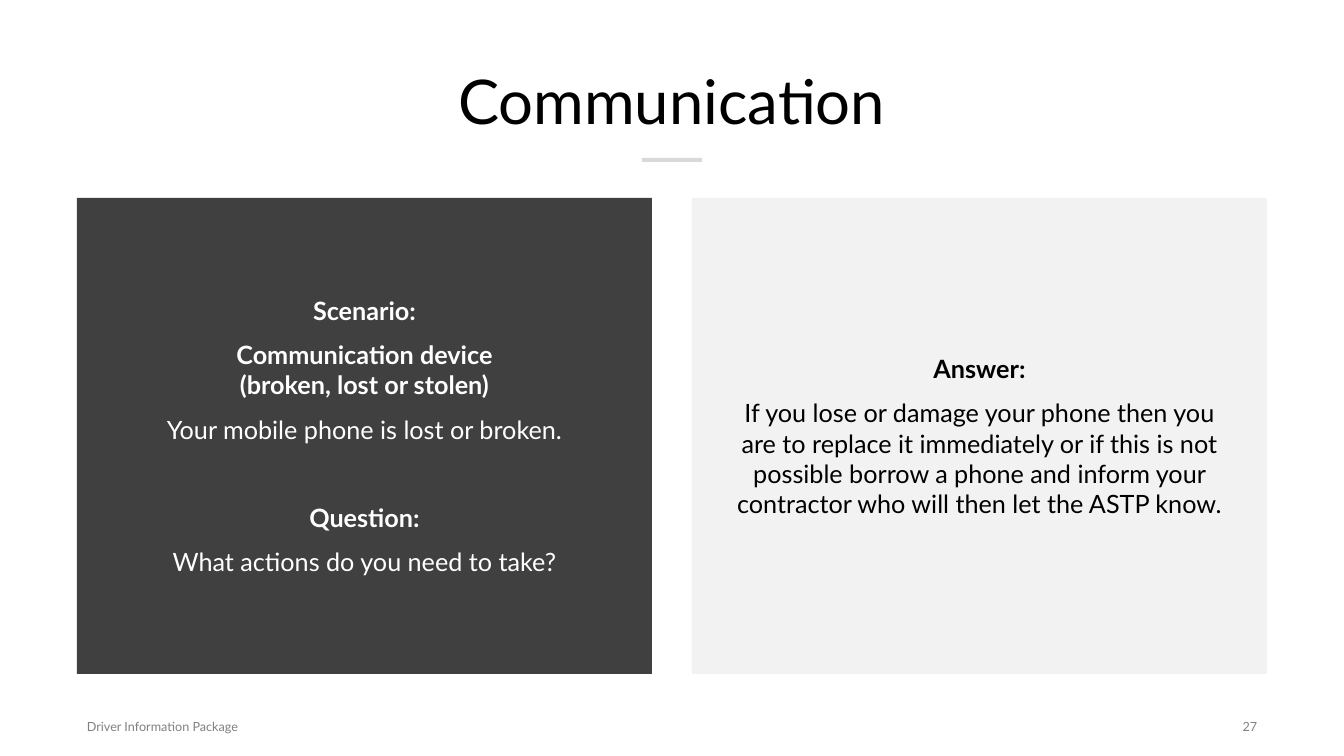
from pptx import Presentation
from pptx.dml.color import RGBColor
from pptx.enum.shapes import MSO_SHAPE as Shape
from pptx.enum.text import MSO_ANCHOR as Anchor, PP_ALIGN as Align
from pptx.util import Pt

SLIDE_WIDTH, SLIDE_HEIGHT = 1344, 756
EMU_PER_PX = 12192000 / SLIDE_WIDTH
COLORS = {
    "black": "000000",
    "white": "FFFFFF",
    "dark": "404040",
    "light": "F2F2F2",
    "accent": "D9D9D9",
    "footer": "808080",
}


def px(length):
    return round(length * EMU_PER_PX)


def color(name):
    return RGBColor.from_string(COLORS[name])


class SlideBuilder:
    font = "Lato"
    body_size = 18
    panel_inset = 40

    def __init__(self, presentation):
        self.slide = presentation.slides.add_slide(presentation.slide_layouts[6])

    def add_run(self, paragraph, text, size, color_name, bold=False):
        run = paragraph.add_run()
        run.text = text
        run.font.name = self.font
        run.font.size = Pt(size)
        run.font.bold = bold
        run.font.color.rgb = color(color_name)

    def rectangle(self, left, top, width, height, fill):
        shape = self.slide.shapes.add_shape(
            Shape.RECTANGLE, px(left), px(top), px(width), px(height))
        shape.shadow.inherit = False
        shape.fill.solid()
        shape.fill.fore_color.rgb = color(fill)
        shape.line.fill.background()
        return shape

    def label(self, left, top, width, height, text, size, color_name, align):
        box = self.slide.shapes.add_textbox(px(left), px(top), px(width), px(height))
        frame = box.text_frame
        frame.word_wrap = True
        frame.vertical_anchor = Anchor.MIDDLE
        paragraph = frame.paragraphs[0]
        paragraph.alignment = align
        self.add_run(paragraph, text, size, color_name)

    def panel(self, left, top, width, height, fill, text_color, paragraphs):
        """Each paragraph is (lines, bold, space before in points)."""
        frame = self.rectangle(left, top, width, height, fill).text_frame
        frame.word_wrap = True
        frame.vertical_anchor = Anchor.MIDDLE
        frame.margin_left = frame.margin_right = px(self.panel_inset)
        frame.margin_top = frame.margin_bottom = px(self.panel_inset)
        for index, (lines, bold, space_before) in enumerate(paragraphs):
            paragraph = frame.add_paragraph() if index else frame.paragraphs[0]
            paragraph.alignment = Align.CENTER
            paragraph.space_before = Pt(space_before)
            for number, line in enumerate(lines):
                if number:
                    paragraph.add_line_break()
                self.add_run(paragraph, line, self.body_size, text_color, bold)


def main():
    presentation = Presentation()
    presentation.slide_width = px(SLIDE_WIDTH)
    presentation.slide_height = px(SLIDE_HEIGHT)
    builder = SlideBuilder(presentation)

    margin, gap = 77, 40
    content_width = SLIDE_WIDTH - 2 * margin
    panel_width = (content_width - gap) // 2

    # Title and accent bar
    accent_width = 60
    builder.rectangle((SLIDE_WIDTH - accent_width) // 2, 158, accent_width, 4, "accent")
    builder.label(margin, 40, content_width, 119, "Communication", 44, "black",
                  Align.CENTER)

    # Scenario and answer panels
    scenario = [
        (["Scenario:"], True, 10),
        (["Communication device", "(broken, lost or stolen)"], True, 10),
        (["Your mobile phone is lost or broken."], False, 10),
        (["Question:"], True, 41.6),
        (["What actions do you need to take?"], False, 10),
    ]
    answer = [
        (["Answer:"], True, 10),
        (["If you lose or damage your phone then you are to replace it immediately "
          "or if this is not possible borrow a phone and inform your contractor "
          "who will then let the ASTP know."], False, 10),
    ]
    panels = [("dark", "white", scenario), ("light", "black", answer)]
    for column, (fill, text_color, paragraphs) in enumerate(panels):
        left = margin + column * (panel_width + gap)
        builder.panel(left, 198, panel_width, 476, fill, text_color, paragraphs)

    # Footer and page number
    number_width = 119
    builder.label(margin, 707, 476, 39, "Driver Information Package", 9, "footer",
                  Align.LEFT)
    builder.label(SLIDE_WIDTH - margin - number_width, 707, number_width, 39, "27", 9,
                  "footer", Align.RIGHT)

    presentation.save("out.pptx")


if __name__ == "__main__":
    main()
